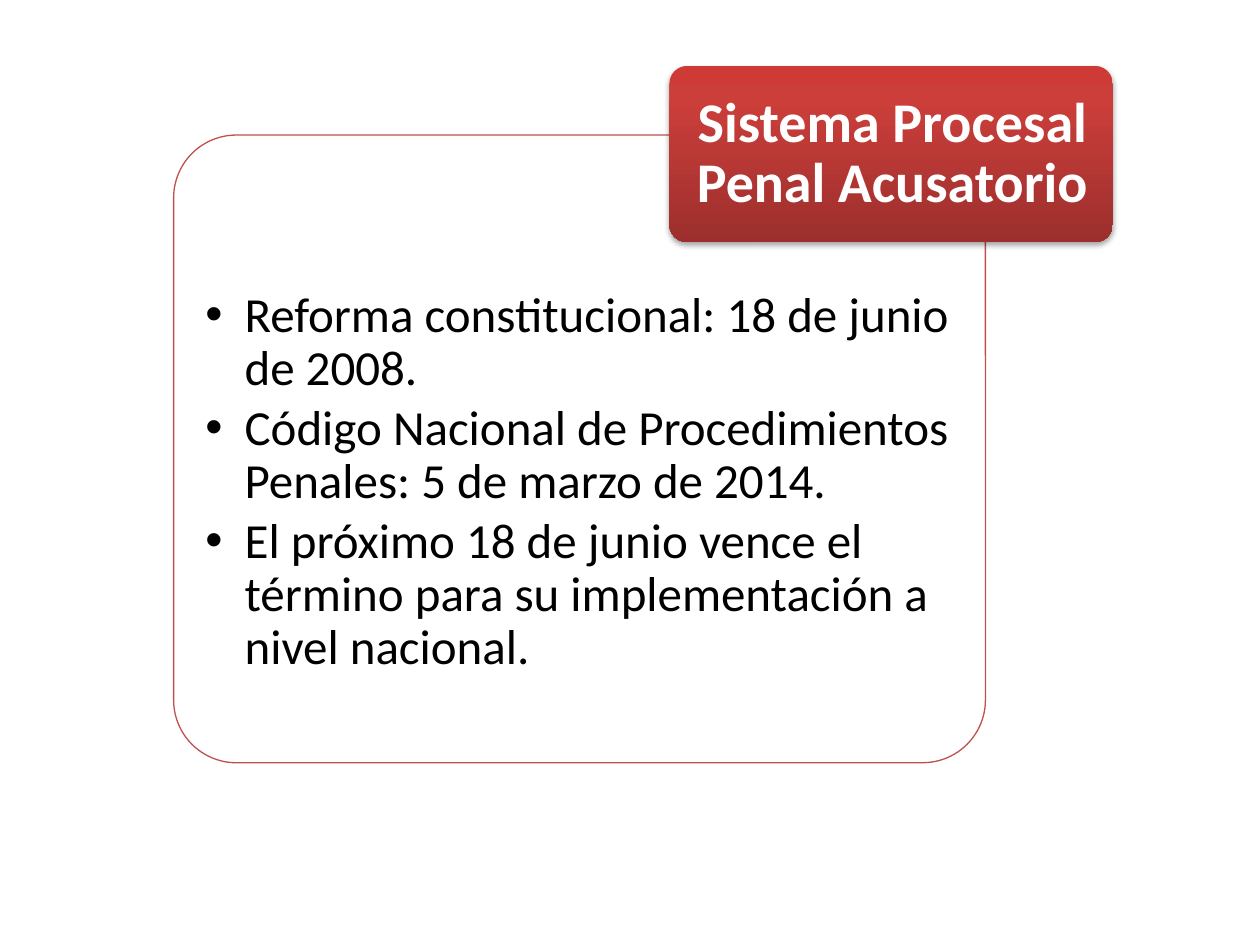
from lxml.etree import fromstring
from pptx import Presentation
from pptx.dml.color import RGBColor as RGB
from pptx.enum.shapes import MSO_SHAPE as Kind
from pptx.enum.text import MSO_ANCHOR as Anchor, PP_ALIGN as Align
from pptx.oxml.ns import qn
from pptx.util import Pt

NS = 'xmlns:a="http://schemas.openxmlformats.org/drawingml/2006/main"'


def color(code):
    return RGB.from_string(code)


def write(box, frame, lines, look, font):
    """Fill a text box: frame, paragraph and font values come from dicts."""
    text = box.text_frame
    for key, val in frame.items():
        setattr(text, key, val)
    for i, line in enumerate(lines):
        para = text.paragraphs[0] if i == 0 else text.add_paragraph()
        run = para.add_run()
        run.text = line
        for key, val in look.items():
            setattr(para, key, val)
        for key, val in font.items():
            if key == "color":
                run.font.color.rgb = color(val)
            else:
                setattr(run.font, key, val)


deck = Presentation()
deck.slide_width, deck.slide_height = Pt(720), Pt(540)
shapes = deck.slides.add_slide(deck.slide_layouts[6]).shapes

# Panel with a thin red outline
panel = shapes.add_shape(Kind.ROUNDED_RECTANGLE, Pt(99.2), Pt(77.2), Pt(463.9), Pt(358.7))
panel.adjustments[0] = 0.1
panel.shadow.inherit = False
panel.fill.solid()
panel.fill.fore_color.rgb = color("FFFFFF")
tint = panel.fill._xPr.find(qn("a:solidFill"))[0]
tint.append(fromstring(f'<a:alpha {NS} val="90000"/>'))
panel.line.color.rgb = color("C0504D")
panel.line.width = Pt(0.75)

# Bullet list, set below the title badge by its top margin
facts = [
    "Reforma constitucional: 18 de junio de 2008.",
    "Código Nacional de Procedimientos Penales: 5 de marzo de 2014.",
    "El próximo 18 de junio vence el término para su implementación a nivel nacional.",
]
body = shapes.add_textbox(Pt(107.3), Pt(85.7), Pt(447.8), Pt(265.7))
write(
    body,
    dict(word_wrap=True, margin_left=Pt(10), margin_right=Pt(10),
         margin_top=Pt(80), margin_bottom=Pt(10)),
    facts,
    dict(line_spacing=0.9, space_after=Pt(4.2)),
    dict(name="Calibri", size=Pt(28), color="000000"),
)
for para in body.text_frame.paragraphs:
    props = para._p.get_or_add_pPr()
    props.set("marL", str(Pt(22.5)))
    props.set("indent", str(-Pt(22.5)))
    props.append(fromstring(f'<a:buFont {NS} typeface="Arial"/>'))
    props.append(fromstring(f'<a:buChar {NS} char="•"/>'))

# Title badge with a red gradient and a soft shadow
badge = shapes.add_shape(Kind.ROUNDED_RECTANGLE, Pt(382.5), Pt(37.7), Pt(253.4), Pt(100.7))
badge.adjustments[0] = 0.1
badge.line.fill.background()
badge.fill.gradient()
badge.fill.gradient_angle = 90
stops = badge.fill._fill._gradFill.find(qn("a:gsLst"))
for stop in list(stops):
    stops.remove(stop)
for place, code in [(0, "CE3B37"), (20, "CB3E3A"), (100, "9C2F2D")]:
    stops.append(fromstring(
        f'<a:gs {NS} pos="{place * 1000}"><a:srgbClr val="{code}"/></a:gs>'))
badge.fill.gradient_angle = 270
badge.shadow.inherit = False
glow = badge._element.spPr.find(qn("a:effectLst"))
glow.append(fromstring(
    f'<a:outerShdw {NS} blurRad="{Pt(3.1)}" dist="{Pt(1.8)}" dir="5400000" rotWithShape="0">'
    '<a:srgbClr val="000000"><a:alpha val="35000"/></a:srgbClr></a:outerShdw>'))

# Title text
title = shapes.add_textbox(Pt(386.2), Pt(40.6), Pt(247.7), Pt(95))
write(
    title,
    dict(word_wrap=True, vertical_anchor=Anchor.MIDDLE, margin_left=Pt(4.8),
         margin_right=Pt(4.8), margin_top=Pt(3.2), margin_bottom=Pt(3.2)),
    ["Sistema Procesal Penal Acusatorio"],
    dict(alignment=Align.CENTER, line_spacing=0.9),
    dict(name="Calibri", size=Pt(32), bold=True, color="FFFFFF"),
)

deck.save("out.pptx")
